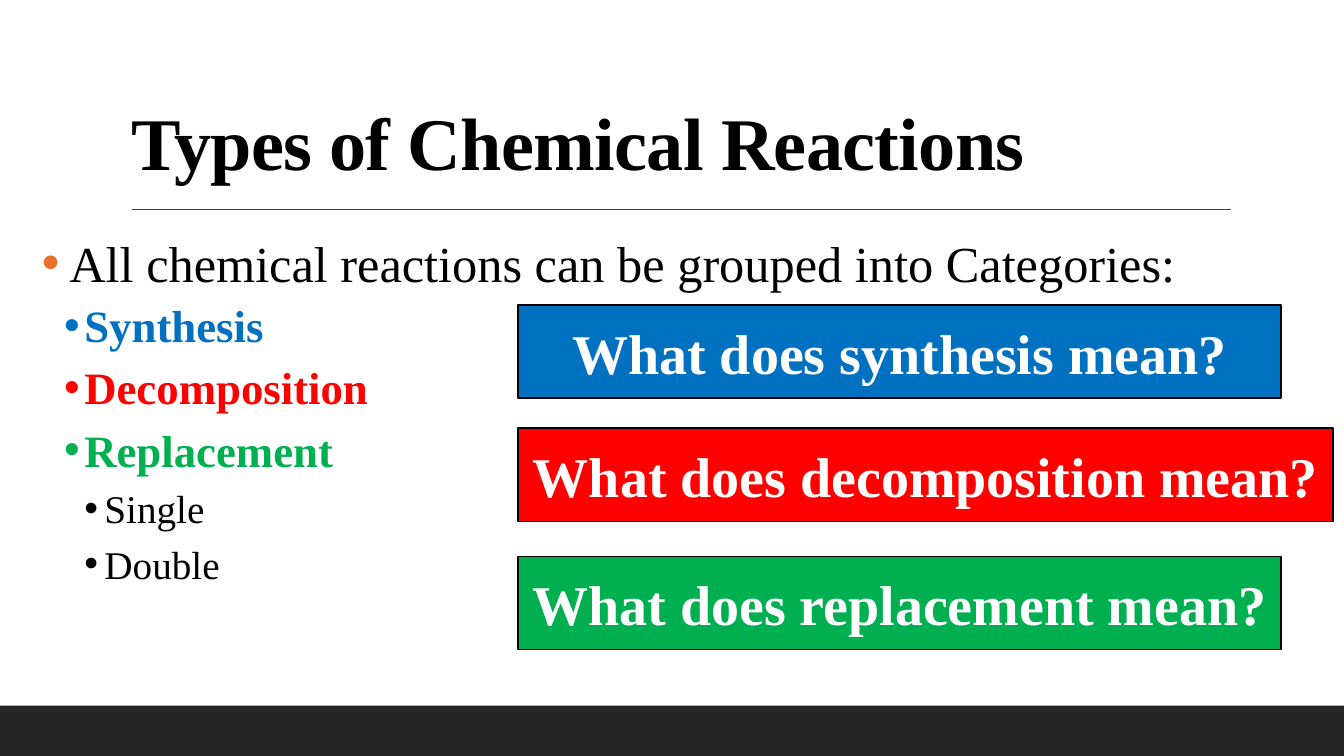
import pptx
import pptx.util
import pptx.dml.color
import pptx.enum.shapes
import pptx.enum.text
from lxml import etree

Pt = pptx.util.Pt
FONT = "Times New Roman"
BLACK, WHITE, DARK, RULE, ORANGE = "000000", "FFFFFF", "262626", "404040", "E77129"
BLUE, RED, GREEN = "0070C0", "FF0000", "00B050"

# Content
TITLE = "Types of Chemical Reactions"
OUTLINE = [  # level, text, text colour, bullet colour
    (0, " All chemical reactions can be grouped into Categories:", BLACK, ORANGE),
    (1, "Synthesis", BLUE, BLUE),
    (1, "Decomposition", RED, RED),
    (1, "Replacement", GREEN, GREEN),
    (2, "Single", BLACK, BLACK),
    (2, "Double", BLACK, BLACK),
]
LEVELS = [  # size, bold, left margin, hanging indent, space before, space after
    (36, False, 7.2, 7.2, 12, 2),
    (32, True, 30.25, 14.4, 2, 4),
    (28, False, 44.65, 14.4, 2, 4),
]
QUESTIONS = [  # text, fill, top, width
    ("What does synthesis mean?", BLUE, 218, 545),
    ("What does decomposition mean?", RED, 306, 582),
    ("What does replacement mean?", GREEN, 397.5, 545),
]
BOX_LEFT, BOX_HEIGHT = 370, 66.5


def rgb(color):
    return pptx.dml.color.RGBColor.from_string(color)


def place(sp, left, top, width, height):
    sp.left, sp.top, sp.width, sp.height = Pt(left), Pt(top), Pt(width), Pt(height)


def set_font(p, size, color, bold):
    p.font.name, p.font.size, p.font.bold = FONT, Pt(size), bold
    p.font.color.rgb = rgb(color)


def add_xml(parent, tag, **attrs):
    return etree.SubElement(parent, pptx.oxml.ns.qn(tag), attrs)


def set_bullet(p, color, margin, hanging):
    pPr = p._p.get_or_add_pPr()
    pPr.set("marL", str(Pt(margin)))
    pPr.set("indent", str(-Pt(hanging)))
    add_xml(add_xml(pPr, "a:buClr"), "a:srgbClr", val=color)
    add_xml(pPr, "a:buFont", typeface="Arial")
    add_xml(pPr, "a:buChar", char="•")


def add_box(left, top, width, height, fill):
    sp = slide.shapes.add_shape(pptx.enum.shapes.MSO_SHAPE.RECTANGLE,
                                Pt(left), Pt(top), Pt(width), Pt(height))
    sp.shadow.inherit = False
    sp.fill.solid()
    sp.fill.fore_color.rgb = rgb(fill)
    sp.line.fill.background()
    return sp


prs = pptx.Presentation()
prs.slide_width, prs.slide_height = Pt(960), Pt(540)
slide = prs.slides.add_slide(prs.slide_layouts[5])

# Footer band and rule under the title
add_box(0, 504, 960, 36, DARK)
rule = slide.shapes.add_connector(pptx.enum.shapes.MSO_CONNECTOR.STRAIGHT,
                                  Pt(94.3), Pt(149.5), Pt(879), Pt(149.5))
rule.line.color.rgb = rgb(RULE)
rule.line.width = Pt(1)
add_xml(rule._element.spPr, "a:effectLst")

# Title
title = slide.shapes.title
place(title, 86.4, 22.5, 792, 114.5)
tf = title.text_frame
tf.text = TITLE
tf.vertical_anchor = pptx.enum.text.MSO_ANCHOR.BOTTOM
tf.auto_size = pptx.enum.text.MSO_AUTO_SIZE.NONE
p = tf.paragraphs[0]
p.alignment = pptx.enum.text.PP_ALIGN.LEFT
p.line_spacing = 0.9
set_font(p, 53, BLACK, True)
p.runs[0].font._element.set("spc", "-50")

# Bulleted outline
body = slide.shapes.add_textbox(Pt(30), Pt(162), Pt(863.5), Pt(342))
tf = body.text_frame
tf.word_wrap = True
tf.margin_left = tf.margin_right = 0
for i, (level, text, color, bullet) in enumerate(OUTLINE):
    size, bold, margin, hanging, before, after = LEVELS[level]
    p = tf.add_paragraph() if i else tf.paragraphs[0]
    p.text, p.level = text, level
    p.space_before, p.space_after = Pt(before), Pt(after)
    set_font(p, size, color, bold)
    set_bullet(p, bullet, margin, hanging)

# Question boxes
for text, fill, top, width in QUESTIONS:
    sp = add_box(BOX_LEFT, top, width, BOX_HEIGHT, fill)
    sp.line.color.rgb = rgb(BLACK)
    sp.line.width = Pt(1.25)
    tf = sp.text_frame
    tf.text = text
    tf.vertical_anchor = pptx.enum.text.MSO_ANCHOR.MIDDLE
    tf.paragraphs[0].alignment = pptx.enum.text.PP_ALIGN.CENTER
    set_font(tf.paragraphs[0], 40, WHITE, True)

prs.save("out.pptx")
